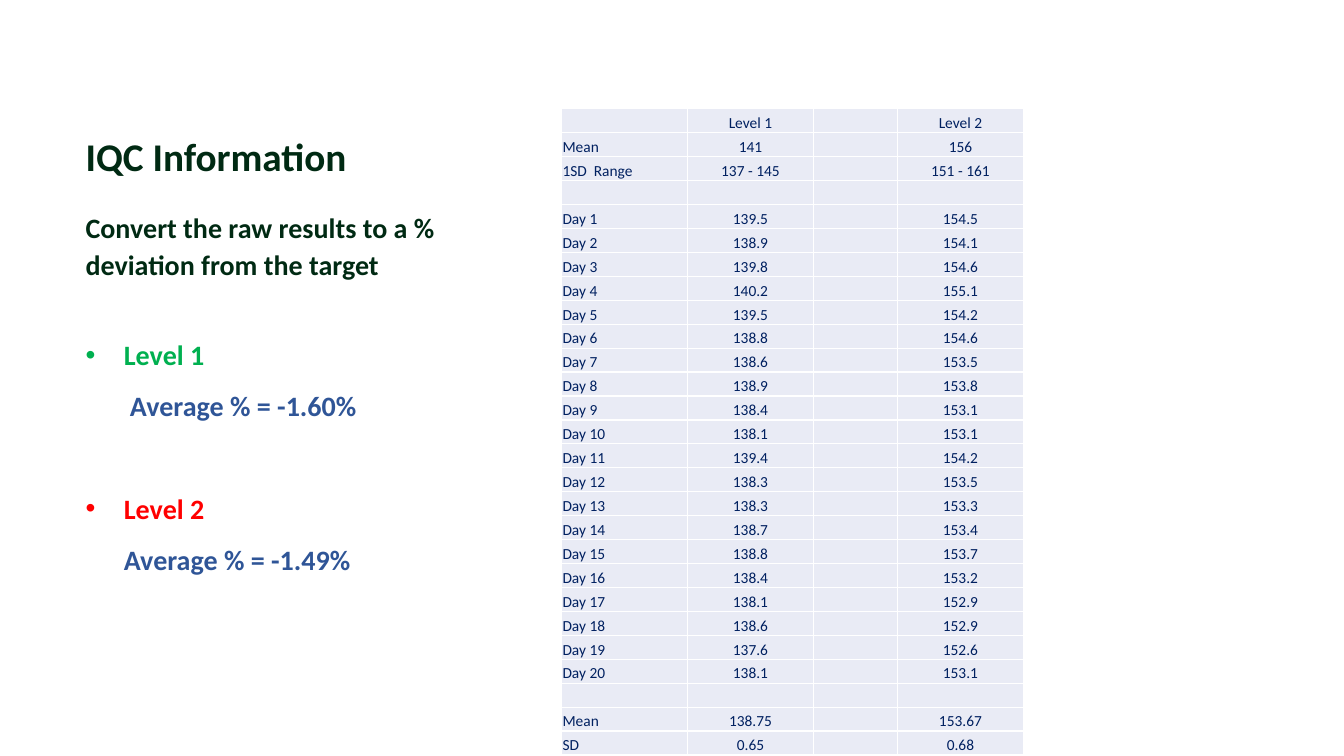
from lxml.etree import SubElement
from pptx import Presentation
from pptx.dml.color import RGBColor
from pptx.enum.text import MSO_ANCHOR, MSO_AUTO_SIZE, PP_ALIGN
from pptx.oxml.ns import qn
from pptx.util import Inches, Pt

COLORS = {"dark": "002A13", "green": "00B050", "red": "FF0000", "blue": "2F5597",
          "navy": "002060", "cell": "E9EBF5", "border": "FFFFFF"}

prs = Presentation()
prs.slide_width, prs.slide_height = Inches(13.33), Inches(7.5)
x, y = prs.slide_width / 100, prs.slide_height / 100
col = prs.slide_width / 16
s = prs.slides.add_slide(prs.slide_layouts[5])


def place(sp, top, width, height):
    frame = {"left": 5.63 * x, "top": top * y, "width": width * x, "height": height * y}
    for name, value in frame.items():
        setattr(sp, name, int(value))
    tf = sp.text_frame
    for name, value in {"word_wrap": True, "auto_size": MSO_AUTO_SIZE.NONE,
                        "vertical_anchor": MSO_ANCHOR.TOP}.items():
        setattr(tf, name, value)
    return tf


def write(p, text, size, color, bold=True, align=PP_ALIGN.LEFT):
    p.alignment = align
    r = p.add_run()
    r.text = text
    for name, value in {"name": "Calibri", "size": Pt(size), "bold": bold}.items():
        setattr(r.font, name, value)
    r.font.color.rgb = RGBColor.from_string(COLORS[color])


tf = place(s.shapes.title, 16.27, 32.5, 8.27)
p = tf.paragraphs[0]
p.line_spacing = 1.1
write(p, "IQC Information", 28, "dark")

tf = place(s.shapes.add_textbox(0, 0, 0, 0), 26.8, 33.7, 11.2)
p = tf.paragraphs[0]
p.line_spacing = 1.1
write(p, "Convert the raw results to a % deviation from the target", 20, "dark")

tf = place(s.shapes.add_textbox(0, 0, 0, 0), 43.6, 31.5, 43.6)
averages = [("Level 1", "green", 0.38, -0.38, 0),
            ("Average % = -1.60%", "blue", 0.44, 0, 10),
            ("Level 2", "red", 0.38, -0.38, 46.8),
            ("Average % = -1.49%", "blue", 0.38, 0, 10)]
for i, (text, color, margin, indent, before) in enumerate(averages):
    p = tf.add_paragraph() if i else tf.paragraphs[0]
    p.line_spacing, p.space_before = 1.1, Pt(before)
    pPr = p._p.get_or_add_pPr()
    pPr.set("marL", str(Inches(margin)))
    pPr.set("indent", str(Inches(indent)))
    if indent:
        SubElement(pPr, qn("a:buFont"), typeface="Arial")
        SubElement(pPr, qn("a:buChar"), char="•")
    write(p, text, 20, color)

level_1 = [139.5, 138.9, 139.8, 140.2, 139.5, 138.8, 138.6, 138.9, 138.4, 138.1,
           139.4, 138.3, 138.3, 138.7, 138.8, 138.4, 138.1, 138.6, 137.6, 138.1]
level_2 = [154.5, 154.1, 154.6, 155.1, 154.2, 154.6, 153.5, 153.8, 153.1, 153.1,
           154.2, 153.5, 153.3, 153.4, 153.7, 153.2, 152.9, 152.9, 152.6, 153.1]
days = [(f"Day {n}", str(a), str(b)) for n, (a, b) in enumerate(zip(level_1, level_2), 1)]
rows = [("", "Level 1", "Level 2"), ("Mean", "141", "156"),
        ("1SD  Range", "137 - 145", "151 - 161"), ("", "", ""), *days,
        ("", "", ""), ("Mean", "138.75", "153.67"), ("SD", "0.65", "0.68")]
widths = [1.5, 1.5, 1, 1.5]
row = 85.47 * y / len(rows)

table = s.shapes.add_table(len(rows), len(widths), int(41.78 * x), int(14.4 * y),
                           int(sum(widths) * col), int(len(rows) * row)).table
table.first_row = table.horz_banding = False
for column, width in zip(table.columns, widths):
    column.width = int(width * col)
for i, (label, first, second) in enumerate(rows):
    table.rows[i].height = int(row)
    for j, text in enumerate((label, first, "", second)):
        cell = table.cell(i, j)
        for name, value in {"margin_left": Inches(0.01), "margin_right": Inches(0.01),
                            "margin_top": Inches(0.01), "margin_bottom": 0,
                            "vertical_anchor": MSO_ANCHOR.BOTTOM}.items():
            setattr(cell, name, value)
        tcPr = cell._tc.get_or_add_tcPr()
        for side in ("lnL", "lnR", "lnT", "lnB"):
            ln = SubElement(tcPr, qn(f"a:{side}"), w=str(Pt(1)))
            fill = SubElement(ln, qn("a:solidFill"))
            SubElement(fill, qn("a:srgbClr"), val=COLORS["border"])
        cell.fill.solid()
        cell.fill.fore_color.rgb = RGBColor.from_string(COLORS["cell"])
        p = cell.text_frame.paragraphs[0]
        if text:
            write(p, text, 11, "navy", False, PP_ALIGN.CENTER if j else PP_ALIGN.LEFT)
        else:
            SubElement(p._p, qn("a:endParaRPr"), sz="1100")

prs.save("out.pptx")
